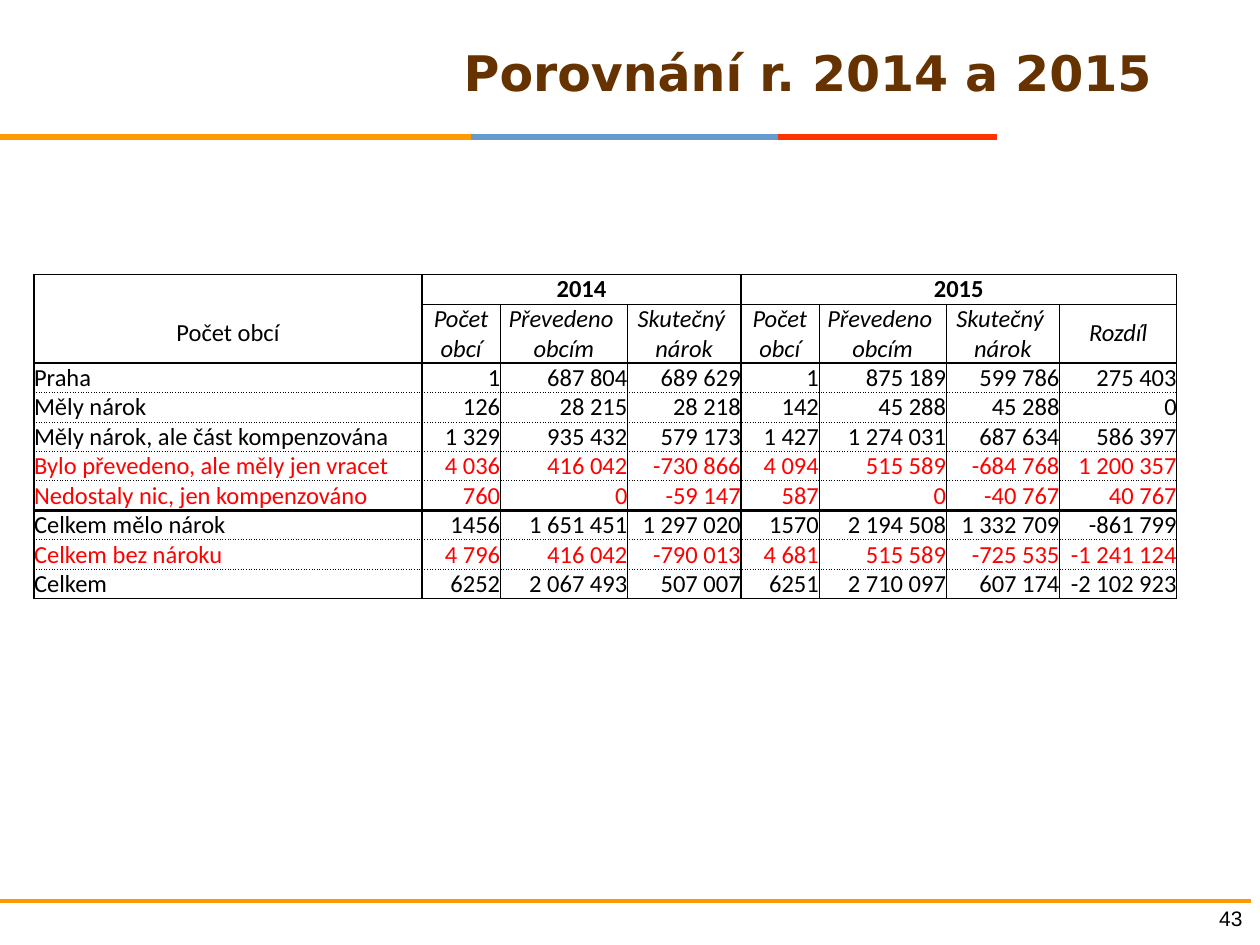
from pptx import Presentation
from pptx.dml.color import RGBColor
from pptx.enum.shapes import MSO_CONNECTOR, MSO_SHAPE
from pptx.enum.text import MSO_ANCHOR, PP_ALIGN
from pptx.oxml.xmlchemy import OxmlElement
from pptx.util import Inches, Pt

THEME = {
    "black": "000000", "brown": "663300", "red": "FF0000",
    "orange": "FF9900", "blue": "6699CC", "scarlet": "FF3300",
    "title": ("DejaVu Sans", 28), "page": ("Arial", 12), "table": ("Calibri", 14),
}

TITLE = "Porovnání r. 2014 a 2015"
PAGE = "43"
STRIPES = [("orange", 3.74), ("blue", 2.44), ("scarlet", 1.73)]

YEARS = [(1, 3, "2014"), (4, 7, "2015")]  # first column, last column, label
COUNT, MOVED, CLAIM = "Počet obcí", "Převedeno \vobcím", "Skutečný \vnárok"
HEADS = ["Počet obcí", COUNT, MOVED, CLAIM, COUNT, MOVED, CLAIM, "Rozdíl"]
BODY = [
    ["Praha", "1", "687 804", "689 629", "1", "875 189", "599 786", "275 403"],
    ["Měly nárok", "126", "28 215", "28 218", "142", "45 288", "45 288", "0"],
    ["Měly nárok, ale část kompenzována", "1 329", "935 432", "579 173",
     "1 427", "1 274 031", "687 634", "586 397"],
    ["Bylo převedeno, ale měly jen vracet", "4 036", "416 042", "-730 866",
     "4 094", "515 589", "-684 768", "1 200 357"],
    ["Nedostaly nic, jen kompenzováno", "760", "0", "-59 147",
     "587", "0", "-40 767", "40 767"],
    ["Celkem mělo nárok", "1456", "1 651 451", "1 297 020",
     "1570", "2 194 508", "1 332 709", "-861 799"],
    ["Celkem bez nároku", "4 796", "416 042", "-790 013",
     "4 681", "515 589", "-725 535", "-1 241 124"],
    ["Celkem", "6252", "2 067 493", "507 007",
     "6251", "2 710 097", "607 174", "-2 102 923"],
]
RED_ROWS = {5, 6, 8}
WIDTHS = [3.08, 0.62, 1.01, 0.9, 0.62, 1.01, 0.9, 0.93]
ROW = 0.23
UPRIGHT = {0, 1, 4, 8}  # heavy column edges
LEVEL = {0: (1, "solid"), 1: (0.5, "solid"), 2: (1, "solid"),
         7: (2, "solid"), 10: (1, "solid")}  # other row edges are dotted


def color(name):
    return RGBColor.from_string(THEME[name])


def style(para, kind, hue="black", bold=False, italic=False, align=PP_ALIGN.LEFT):
    para.alignment = align
    face, size = THEME[kind]
    for run in para.runs:
        font = run.font
        font.name, font.size = face, Pt(size)
        font.bold, font.italic = bold, italic
        font.color.rgb = color(hue)


def add_frame(slide):
    """Colour stripes, footer rule and page number."""
    group = slide.shapes.add_group_shape()
    left = 0
    for hue, width in STRIPES:
        bar = group.shapes.add_shape(
            MSO_SHAPE.RECTANGLE, Inches(left), Inches(1.07),
            Inches(width), Inches(0.04))
        bar.shadow.inherit = False
        bar.fill.solid()
        bar.fill.fore_color.rgb = bar.line.color.rgb = color(hue)
        bar.line.width = Pt(0.75)
        left += width

    rule = slide.shapes.add_connector(
        MSO_CONNECTOR.STRAIGHT, Inches(-0.01), Inches(7.15),
        Inches(9.93), Inches(7.15))
    rule.line.color.rgb = color("orange")
    rule.line.width = Pt(2)
    rule._element.spPr.append(OxmlElement("a:effectLst"))

    page = slide.shapes.add_textbox(
        Inches(9.49), Inches(7.14), Inches(0.47), Inches(0.3)).text_frame
    page.word_wrap = True
    page.text = PAGE
    style(page.paragraphs[0], "page", align=PP_ALIGN.RIGHT)


def add_title(slide):
    title = slide.shapes.title
    title.left, title.top = Inches(2.8), Inches(0.02)
    title.width, title.height = Inches(7.22), Inches(1.1)
    title.text_frame.text = TITLE
    title.text_frame.vertical_anchor = MSO_ANCHOR.MIDDLE
    style(title.text_frame.paragraphs[0], "title", "brown", bold=True,
          align=PP_ALIGN.CENTER)


def col_edge(edge):
    return (1 if edge in UPRIGHT else 0.5), "solid"


def row_edge(edge, col):
    if edge == 1 and col == 0:
        return None
    return LEVEL.get(edge, (0.5, "sysDot"))


def add_edge(cell, side, edge):
    line = OxmlElement(f"a:ln{side}")
    cell._tc.get_or_add_tcPr().append(line)
    if edge is None:
        line.append(OxmlElement("a:noFill"))
        return
    width, dash = edge
    line.set("w", str(Pt(width)))
    fill, hue, kind = map(OxmlElement, ("a:solidFill", "a:srgbClr", "a:prstDash"))
    hue.set("val", THEME["black"])
    kind.set("val", dash)
    fill.append(hue)
    line.extend([fill, kind])


def fill_cell(cell, row, col, last, text):
    """Write and border a cell that reaches to column last."""
    cell.margin_left = cell.margin_right = 0
    cell.margin_top = cell.margin_bottom = 0
    is_name = row > 1 and col == 0
    cell.vertical_anchor = MSO_ANCHOR.BOTTOM if is_name else MSO_ANCHOR.MIDDLE
    cell.text_frame.text = text
    para = cell.text_frame.paragraphs[0]
    align = PP_ALIGN.LEFT if is_name else PP_ALIGN.RIGHT
    style(para, "table", "red" if row in RED_ROWS else "black",
          bold=row == 0, italic=row == 1 and col > 0,
          align=PP_ALIGN.CENTER if row < 2 else align)
    end = OxmlElement("a:endParaRPr")  # keeps empty cells at table type size
    end.set("sz", str(THEME["table"][1] * 100))
    para._p.append(end)

    add_edge(cell, "L", col_edge(col))
    add_edge(cell, "R", col_edge(last + 1))
    add_edge(cell, "T", row_edge(row, col))
    add_edge(cell, "B", row_edge(row + 1, col))
    cell.fill.background()


def add_grid(slide):
    years = {first: label for first, _, label in YEARS}
    ends = {first: last for first, last, _ in YEARS}
    rows = [[years.get(c, "") for c in range(len(HEADS))], HEADS, *BODY]
    table = slide.shapes.add_table(
        len(rows), len(HEADS), Inches(0.27), Inches(2.18),
        Inches(sum(WIDTHS)), Inches(ROW * (len(rows) + 1))).table
    table.first_row = table.horz_banding = False
    for col, width in zip(table.columns, WIDTHS):
        col.width = Inches(width)
    for r, texts in enumerate(rows):
        table.rows[r].height = Inches(ROW * 2 if r == 1 else ROW)
        for c, text in enumerate(texts):
            last = ends.get(c, c) if r == 0 else c
            fill_cell(table.cell(r, c), r, c, last, text)
    for first, last in ends.items():
        table.cell(0, first).merge(table.cell(0, last))


def main():
    deck = Presentation()
    deck.slide_width, deck.slide_height = Inches(10), Inches(7.5)
    slide = deck.slides.add_slide(deck.slide_layouts[5])
    add_frame(slide)
    add_title(slide)
    add_grid(slide)
    deck.save("out.pptx")


if __name__ == "__main__":
    main()
